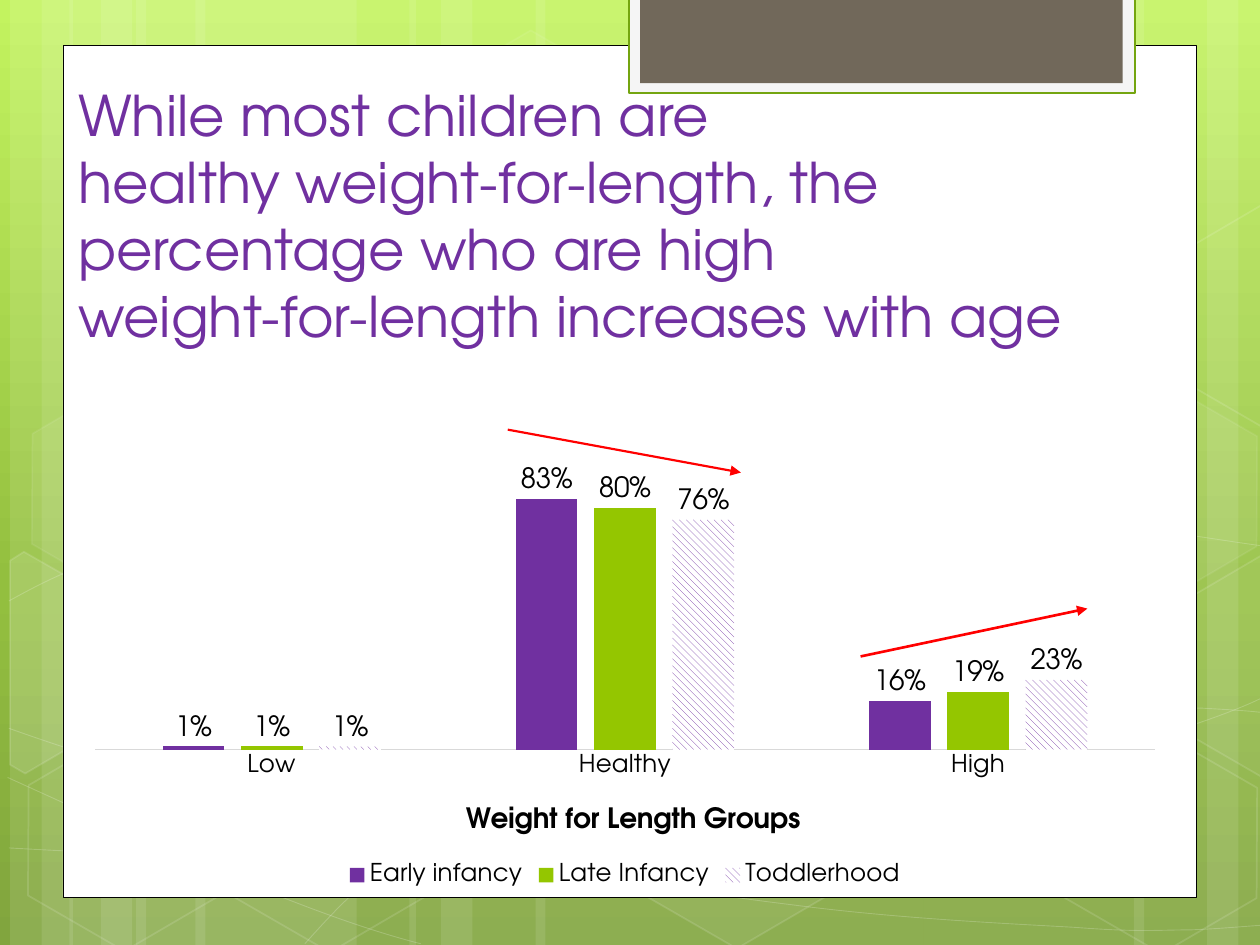
from copy import deepcopy

from pptx import Presentation
from pptx.chart.data import CategoryChartData
from pptx.dml.color import RGBColor
from pptx.enum.chart import XL_CHART_TYPE as ChartType
from pptx.enum.chart import XL_LABEL_POSITION as LabelPosition
from pptx.enum.chart import XL_LEGEND_POSITION as LegendPosition
from pptx.enum.chart import XL_TICK_LABEL_POSITION as TickLabels
from pptx.enum.chart import XL_TICK_MARK as TickMark
from pptx.enum.dml import MSO_PATTERN as Pattern
from pptx.enum.shapes import MSO_CONNECTOR as Connector
from pptx.enum.shapes import MSO_SHAPE as Shape
from pptx.enum.text import MSO_ANCHOR as Anchor
from pptx.enum.text import MSO_AUTO_SIZE as AutoSize
from pptx.enum.text import PP_ALIGN as Align
from pptx.oxml import parse_xml
from pptx.oxml.ns import nsdecls, qn
from pptx.oxml.xmlchemy import OxmlElement
from pptx.util import Inches, Pt

FONT = "TeX Gyre Adventor"
COLORS = {
    "white": "FFFFFF", "black": "000000", "purple": "7030A0", "lime": "94C600",
    "red": "FF0000", "axis": "D9D9D9", "tab": "71685A", "tab_edge": "F5F5F5",
    "tab_line": "74A510", "sky_top": "C3F35F", "sky_mid": "93BF3F", "sky_low": "81A53E",
}
BANDS = [(1.08, 1.75), (0.08, 0.5), (0.33, 0.83), (1.55, 1.75), (0.55, 0.5), (0.8, 0.83),
         (7.33, 1.75), (9.58, 0.5), (9, 0.83), (4.25, 3.08), (3.25, 0.5), (3.5, 0.83)]
CURVES = [
    [[(0.07, 6.73), (0.61, 6.76), (1.15, 6.79), (1.9, 6.78), (2.65, 6.77), (3.58, 6.75),
      (4.58, 6.65), (5.58, 6.55), (7, 6.36), (7.92, 6.17), (8.83, 5.98), (9.77, 5.68),
      (10.07, 5.51)]],
    [[(0.07, 4.77), (0.36, 4.61), (0.65, 4.46), (1.21, 4.31), (1.78, 4.16), (2.59, 3.94),
      (3.47, 3.87), (4.36, 3.8), (5.44, 3.79), (6.54, 3.87), (7.64, 3.95), (9.47, 4.26),
      (10.07, 4.34)]],
    [[(0.06, 6.17), (1.27, 6.72), (2.47, 7.27), (3.34, 7.49)]],
    [[(0.07, 5.78), (0.38, 5.89), (0.7, 6), (1.28, 6.16), (1.86, 6.31), (2.73, 6.56),
      (3.57, 6.73), (4.4, 6.9), (5.45, 7.08), (6.28, 7.18), (7.11, 7.29), (8, 7.33),
      (8.53, 7.36), (9.05, 7.4), (9.19, 7.38), (9.45, 7.38), (9.71, 7.37), (9.89, 7.35),
      (10.07, 7.34)]],
    [[(2.42, 7.49), (2.6, 7.29), (2.78, 7.09), (3.02, 6.91), (3.26, 6.73), (3.6, 6.53),
      (3.88, 6.39), (4.16, 6.25), (4.33, 6.19), (4.7, 6.09), (5.06, 5.99), (5.73, 5.85),
      (6.08, 5.78), (6.44, 5.71), (6.49, 5.71), (6.8, 5.69), (7.11, 5.66), (7.6, 5.63),
      (7.94, 5.62), (8.29, 5.61), (8.86, 5.62), (8.86, 5.62)],
     [(9.53, 5.62)],
     [(9.71, 5.63), (9.88, 5.64), (9.97, 5.65), (10.06, 5.66), (10.03, 5.65), (10.06, 5.66)]],
]
HEXAGONS = [(3.34, 0.36, 4, 8), (4.97, 5.89, 6, 12), (0.11, 5.91, 0, 12),
            (0.14, 3.12, 7, 8), (1.74, 5.92, 0, 12), (7.53, 4.53, 10, 12),
            (8.34, 5.93, 0, 12), (8.34, 3.14, 7, 8)]
CUT_HEXAGONS = [
    ([(0.08, 4.45), (0.19, 4.38), (0.96, 4.82), (0.95, 5.7), (0.2, 6.14), (0.08, 6.07)], 10),
    ([(9.26, 4.85), (10.01, 4.41), (10.09, 4.46), (10.09, 6.13), (10.02, 6.17), (9.26, 5.73)], 4),
    ([(9.26, 2.07), (10.01, 1.63), (10.1, 1.68), (10.09, 3.35), (10.02, 3.39), (9.26, 2.95)], 0),
]


def rgb(name):
    """Look up a named colour."""
    return RGBColor.from_string(COLORS[name])


def set_opacity(fill_parent, percent):
    """Give the colour inside an element an opacity."""
    if percent < 100:
        alpha = OxmlElement("a:alpha")
        alpha.set("val", str(percent * 1000))
        fill_parent.find(".//" + qn("a:srgbClr")).append(alpha)


def paint(shape, fill=None, line=None, width=1, opacity=100, line_opacity=100):
    """Set fill, outline and opacity, with no shadow."""
    shape.shadow.inherit = False
    if fill and opacity:
        shape.fill.solid()
        shape.fill.fore_color.rgb = rgb(fill)
        set_opacity(shape.fill._xPr.find(qn("a:solidFill")), opacity)
    else:
        shape.fill.background()
    if line:
        shape.line.color.rgb = rgb(line)
        shape.line.width = Pt(width)
        set_opacity(shape.line._ln, line_opacity)
    else:
        shape.line.fill.background()


def add_preset(page, kind, box):
    """Add a preset shape in a box given in inches."""
    return page.shapes.add_shape(kind, *map(Inches, box))


def add_outline(page, points, close):
    """Add a freeform through points given in inches."""
    points = [(Inches(x), Inches(y)) for x, y in points]
    builder = page.shapes.build_freeform(*points[0])
    builder.add_line_segments(points[1:], close=close)
    return builder.convert_to_shape()


def add_curve(page, runs):
    """Add an open curve whose longer runs are cubic and single points straight."""
    curve = add_outline(page, sum(runs, []), False)
    steps = iter(list(curve.element.iter(qn("a:lnTo"))))
    for index, run in enumerate(runs):
        count = len(run) - (index == 0)
        if count == 1:
            next(steps)
            continue
        for _ in range(count // 3):
            first, *others = [next(steps) for _ in range(3)]
            cubic = OxmlElement("a:cubicBezTo")
            first.addprevious(cubic)
            for step in (first, *others):
                cubic.append(step[0])
                step.getparent().remove(step)
    return curve


def add_backdrop(page, height):
    """Fill the background and lay bands, curves and hexagons over it."""
    fill = page.background.fill
    fill.gradient()
    fill.gradient_angle = 270
    last = fill.gradient_stops[1]._gs
    last.addnext(deepcopy(last))
    for stop, name, position in zip(fill.gradient_stops, ("sky_top", "sky_mid", "sky_low"),
                                    (0, 0.62, 1)):
        stop.color.rgb = rgb(name)
        stop.position = position
    for left, width in BANDS:
        paint(add_preset(page, Shape.RECTANGLE, (left, 0, width, height)), "white", opacity=10)
    for runs in CURVES:
        paint(add_curve(page, runs), line="white", width=0.5, line_opacity=20)
    for left, top, opacity, line_opacity in HEXAGONS:
        hexagon = add_preset(page, Shape.HEXAGON, (left, top, 1.75, 1.52))
        hexagon.adjustments[0] = 0.285
        hexagon.rotation = 30
        paint(hexagon, "white", "white", 1, opacity, line_opacity)
    for points, opacity in CUT_HEXAGONS:
        paint(add_outline(page, points, True), "white", "white", 1, opacity, 12)


def add_card(page, box):
    """Add the white card with the tab hanging over its top edge."""
    left, top = box[:2]
    paint(add_preset(page, Shape.RECTANGLE, box), "white", "black", 0.5)
    paint(add_preset(page, Shape.RECTANGLE, (left + 4.49, top - 0.38, 4.02, 0.76)),
          "tab_edge", "tab_line", 1.25)
    paint(add_preset(page, Shape.RECTANGLE, (left + 4.58, top - 0.38, 3.83, 0.68)), "tab")


def style_font(font, size, color="black", bold=False):
    """Set the typeface, size and colour of a font."""
    font.name, font.size, font.bold = FONT, Pt(size), bold
    font.color.rgb = rgb(color)


def add_title(page, box):
    """Place the title placeholder in front of the card and write its lines."""
    title = page.shapes.title
    page.shapes.element.append(title.element)
    title.left, title.top, title.width, title.height = map(Inches, box)
    frame = title.text_frame
    frame.auto_size, frame.word_wrap = AutoSize.NONE, True
    frame.vertical_anchor = Anchor.BOTTOM
    para = frame.paragraphs[0]
    para.alignment = Align.LEFT
    lines = ("While most children are ", "healthy weight-for-length, the percentage who are high ",
             "weight-for-length increases with age")
    for index, line in enumerate(lines):
        if index:
            para.add_line_break()
        span = para.add_run()
        span.text = line
        style_font(span.font, 32, "purple")


def set_layout(parent, index, settings):
    """Give a chart part a manual layout."""
    for old in parent.findall(qn("c:layout")):
        parent.remove(old)
    tags = "".join(f'<c:{tag} val="{value}"/>' for tag, value in settings.items())
    parent.insert(index, parse_xml(f'<c:layout {nsdecls("c")}><c:manualLayout>{tags}'
                                   '</c:manualLayout></c:layout>'))


def add_weight_chart(page, box):
    """Add the clustered columns of weight groups by age."""
    data = CategoryChartData(number_format="0%")
    data.categories = ["Low", "Healthy", "High"]
    data.add_series("Early infancy", (0.01, 0.83, 0.16))
    data.add_series("Late Infancy", (0.01, 0.8, 0.19))
    data.add_series("Toddlerhood", (0.01, 0.76, 0.23))
    chart = page.shapes.add_chart(ChartType.COLUMN_CLUSTERED, *map(Inches, box), data).chart
    style_font(chart.font, 10)
    chart.has_title = False
    chart.has_legend = True
    chart.legend.position = LegendPosition.BOTTOM
    chart.legend.include_in_layout = False
    style_font(chart.legend.font, 14)
    plot = chart.plots[0]
    plot.gap_width, plot.overlap, plot.vary_by_categories = 219, -27, False
    for series, color in zip(plot.series, ("purple", "lime", None)):
        fill = series.format.fill
        if color:
            fill.solid()
        else:
            fill.patterned()
            fill.pattern = Pattern.WIDE_DOWNWARD_DIAGONAL
            fill.back_color.rgb = rgb("white")
        fill.fore_color.rgb = rgb(color or "purple")
        series.invert_if_negative = False
        labels = series.data_labels
        labels.show_value, labels.position = True, LabelPosition.OUTSIDE_END
        labels.number_format, labels.number_format_is_linked = "0%", False
        style_font(labels.font, 16)
    values, groups = chart.value_axis, chart.category_axis
    values.visible, values.has_major_gridlines = False, False
    values.minimum_scale, values.maximum_scale = 0, 0.9
    groups.major_tick_mark = groups.minor_tick_mark = TickMark.NONE
    groups.tick_label_position = TickLabels.NEXT_TO_AXIS
    groups.format.line.color.rgb = rgb("axis")
    groups.format.line.width = Pt(0.75)
    style_font(groups.tick_labels.font, 14)
    span = groups.axis_title.text_frame.paragraphs[0].add_run()
    span.text = "Weight for Length Groups"
    style_font(span.font, 16, bold=True)
    set_layout(groups.axis_title._element, 1,
               {"xMode": "edge", "yMode": "edge", "x": 0.345, "y": 0.79})
    set_layout(chart._chartSpace.chart.plotArea, 0,
               {"layoutTarget": "inner", "xMode": "edge", "yMode": "edge",
                "x": 0, "y": 0.06, "w": 1, "h": 0.617})


def add_trend_arrow(page, start, end, width):
    """Draw a red arrow between two points given in inches."""
    arrow = page.shapes.add_connector(Connector.STRAIGHT, *map(Inches, start + end))
    arrow.line.color.rgb = rgb("red")
    arrow.line.width = Pt(width)
    head = OxmlElement("a:tailEnd")
    head.set("type", "triangle")
    arrow.line._ln.append(head)
    arrow.element.spPr.append(OxmlElement("a:effectLst"))


def main():
    """Build the slide and save the deck."""
    deck = Presentation()
    deck.slide_width, deck.slide_height = Inches(10), Inches(7.5)
    page = deck.slides.add_slide(deck.slide_layouts[5])
    add_backdrop(page, 7.5)
    add_card(page, (0.5, 0.36, 9, 6.76))
    add_title(page, (0.52, 0.59, 8.88, 2.23))
    add_weight_chart(page, (0.75, 3.58, 8.42, 3.5))
    add_trend_arrow(page, (4.03, 3.41), (5.88, 3.75), 1.25)
    add_trend_arrow(page, (6.83, 5.21), (8.63, 4.83), 1.5)
    deck.save("out.pptx")


if __name__ == "__main__":
    main()
